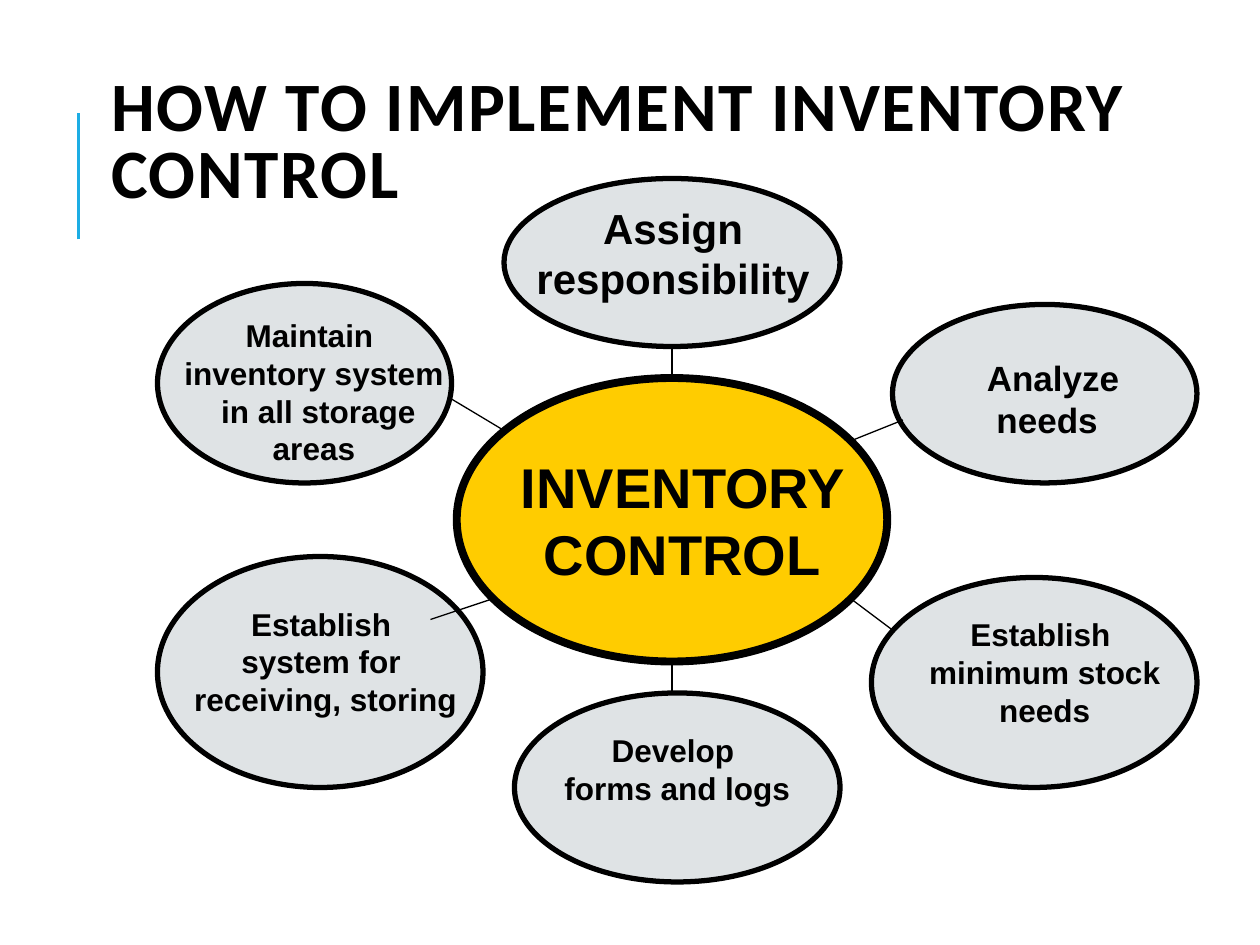
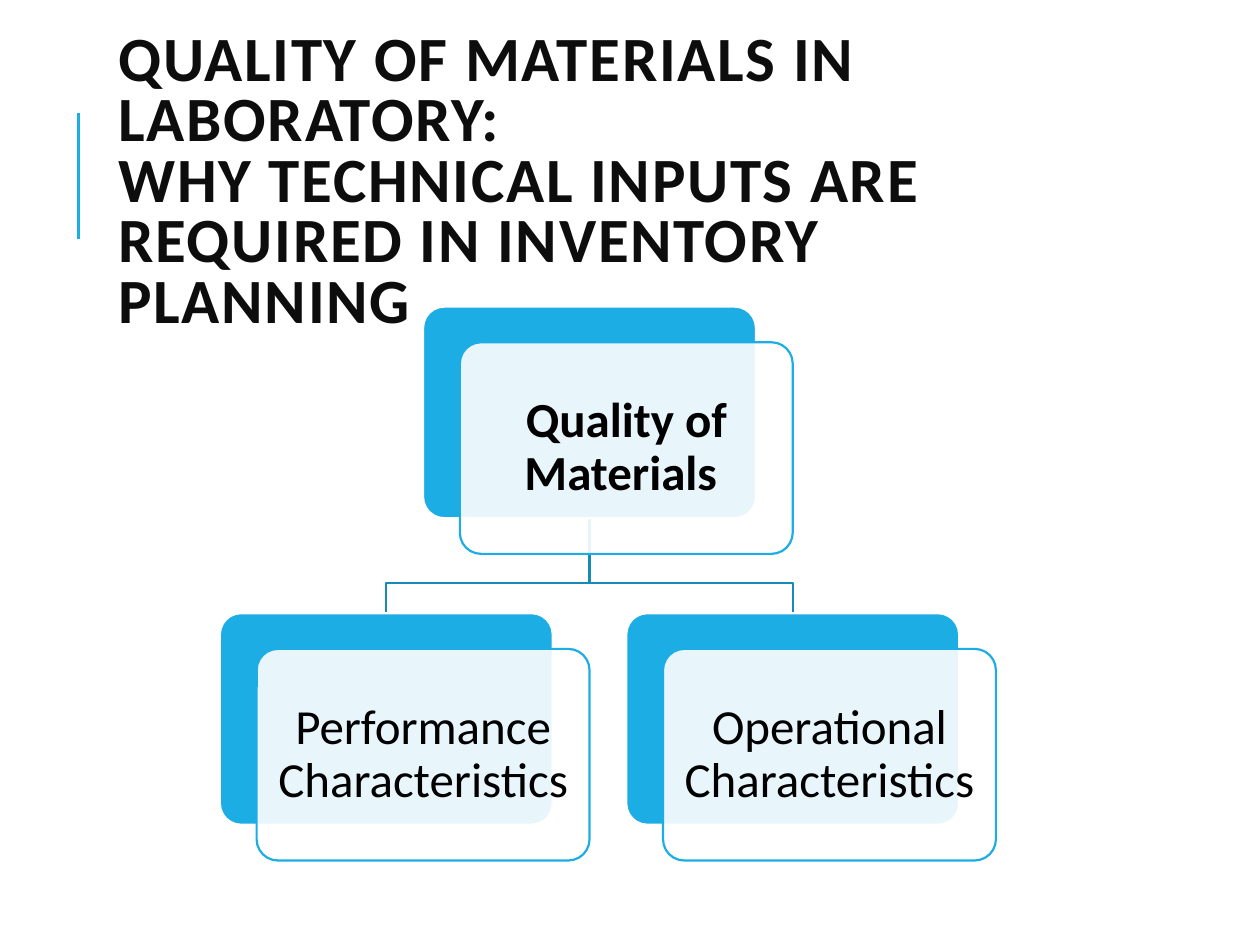
from lxml import etree
from pptx import Presentation
from pptx import util as u
from pptx.dml.color import RGBColor
from pptx.enum import shapes, text
from pptx.oxml.ns import qn

CELL = u.Inches(1) / 12
COLS, ROWS = 120, 90
BLACK, WHITE, BLUE, DARK_BLUE = "000000", "FFFFFF", "1CADE4", "168BB7"
GREY, YELLOW, INK = "DFE3E5", "FFCC00", "0D0D0D"
CENTER, LEFT = text.PP_ALIGN.CENTER, text.PP_ALIGN.LEFT


def paint(sp, fill, line, width):
    if fill:
        sp.fill.solid()
        sp.fill.fore_color.rgb = RGBColor.from_string(fill)
    sp.line.color.rgb = RGBColor.from_string(line)
    sp.line.width = u.Pt(width)
    if sp._element.spPr.find(qn("a:effectLst")) is None:
        etree.SubElement(sp._element.spPr, qn("a:effectLst"))


def write(s, box, words, size, font="Arial", color=BLACK, bold=True, align=CENTER, middle=False):
    tf = s.shapes.add_textbox(*[round(v * CELL) for v in box]).text_frame
    tf.word_wrap = True
    if middle:
        tf.vertical_anchor = text.MSO_ANCHOR.MIDDLE
    p = tf.paragraphs[0]
    p.text = words
    p.alignment = align
    p.font.name, p.font.size, p.font.bold = font, u.Pt(size), bold
    p.font.color.rgb = RGBColor.from_string(color)
    return tf


prs = Presentation()
prs.slide_width, prs.slide_height = round(COLS * CELL), round(ROWS * CELL)

titles = [
    ("HOW TO IMPLEMENT INVENTORY CONTROL", (9.4, 7.8, 108, 12), 39.6, BLACK),
    ("QUALITY OF MATERIALS IN LABORATORY:\nWHY TECHNICAL INPUTS ARE REQUIRED IN INVENTORY PLANNING",
     (10.1, 7.7, 95.6, 19.7), 36, INK),
]
for words, box, size, color in titles:
    s = prs.slides.add_slide(prs.slide_layouts[6])
    bar = s.shapes.add_connector(shapes.MSO_CONNECTOR.STRAIGHT,
                                 *[round(v * CELL) for v in (7.5, 22.8, 7.5, 10.8)])
    paint(bar, None, BLUE, 1.5)
    p = write(s, box, words, size, "Calibri", color, align=LEFT, middle=True).paragraphs[0]
    p.line_spacing = 0.8
    for r in p.runs:
        r.font._element.set("spc", "100")

wheel, tree = prs.slides

bubbles = [
    ((43.5, 36, 41, 27), YELLOW, 4.5, (41.5, 42.5, 41, 14), "INVENTORY CONTROL", 32, CENTER),
    ((48, 17, 32, 16), GREY, 3, (43.1, 18.7, 36, 11), "Assign responsibility", 24, CENTER),
    ((85, 29, 29, 17), GREY, 3, (86.8, 33.4, 24, 9), "Analyze\n needs", 20, LEFT),
    ((83, 55, 31, 20), GREY, 3, (80, 58, 33, 17), "Establish \nminimum stock needs", 18, CENTER),
    ((49, 66, 31, 18), GREY, 3, (45, 69, 33, 8), "Develop \nforms and logs", 18, CENTER),
    ((15, 53, 31, 22), GREY, 3, (10, 57, 36, 12), "Establish \nsystem for \nreceiving, storing", 18, CENTER),
    ((15, 27, 28, 19), GREY, 3, (9.4, 29.5, 35, 16), "Maintain \ninventory system\n in all storage areas", 18, CENTER),
]
for oval, fill, width, box, words, size, align in bubbles:
    sp = wheel.shapes.add_shape(shapes.MSO_SHAPE.OVAL, *[round(v * CELL) for v in oval])
    paint(sp, fill, BLACK, width)
for oval, fill, width, box, words, size, align in bubbles:
    p = write(wheel, box, words, size, align=align).paragraphs[0]
    p._p.get_or_add_pPr().set("marL", str(u.Inches(0.5)))

spokes = [(64, 33, 64, 36), (86, 40, 81, 42), (81, 57, 85, 60),
          (64, 63, 64, 66), (47, 57, 41, 59), (43, 38, 48, 41)]
for ends in spokes:
    spoke = wheel.shapes.add_connector(shapes.MSO_CONNECTOR.STRAIGHT, *[round(v * CELL) for v in ends])
    paint(spoke, None, BLACK, 0.75)

CARD_W, CARD_H = 31.7, 20.15
SHIFT_X, SHIFT_Y, PAD = 3.5, 3.4, 0.6
PARENT_X, PARENT_Y, CHILD_Y, SPREAD = 40.3, 29.2, 58.4, 19.35
MIDDLE_X, FORK_Y = PARENT_X + CARD_W / 2, 55.55

for side in (1, -1):
    child_x = MIDDLE_X + side * SPREAD
    route = [(MIDDLE_X, PARENT_Y + CARD_H), (MIDDLE_X, FORK_Y), (child_x, FORK_Y), (child_x, CHILD_Y)]
    points = [(round(x * CELL), round(y * CELL)) for x, y in route]
    fb = tree.shapes.build_freeform(*points[0])
    fb.add_line_segments(points[1:], close=False)
    branch = fb.convert_to_shape()
    branch.fill.background()
    paint(branch, None, DARK_BLUE, 1.25)

cards = [
    (PARENT_X, PARENT_Y, "Quality of Materials ", True),
    (PARENT_X - SPREAD, CHILD_Y, "Performance Characteristics ", False),
    (PARENT_X + SPREAD, CHILD_Y, "Operational Characteristics ", False),
]
for x, y, words, bold in cards:
    front_x, front_y = x + SHIFT_X, y + SHIFT_Y
    for left, top, fill, line in ((x, y, BLUE, WHITE), (front_x, front_y, WHITE, BLUE)):
        sp = tree.shapes.add_shape(shapes.MSO_SHAPE.ROUNDED_RECTANGLE,
                                   *[round(v * CELL) for v in (left, top, CARD_W, CARD_H)])
        sp.adjustments[0] = 0.1
        paint(sp, fill, line, 1.25)
    tint = sp._element.spPr.find(qn("a:solidFill"))[0]
    etree.SubElement(tint, qn("a:alpha")).set("val", "90000")
    box = (front_x + PAD, front_y + PAD, CARD_W - 2 * PAD, CARD_H - 2 * PAD)
    tf = write(tree, box, words, 28, "Calibri", bold=bold, middle=True)
    tf.margin_left = tf.margin_right = tf.margin_top = tf.margin_bottom = u.Inches(0.11)
    tf.paragraphs[0].line_spacing = 0.9

prs.save("out.pptx")
